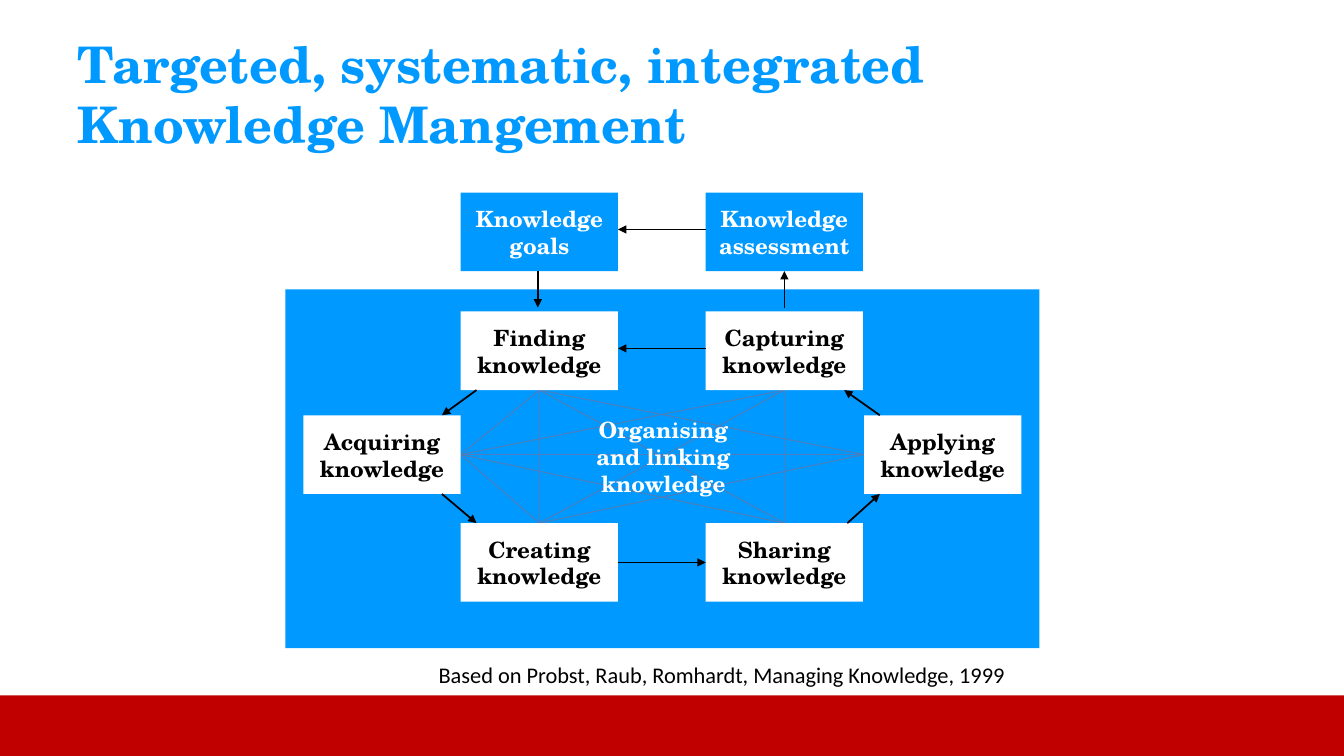
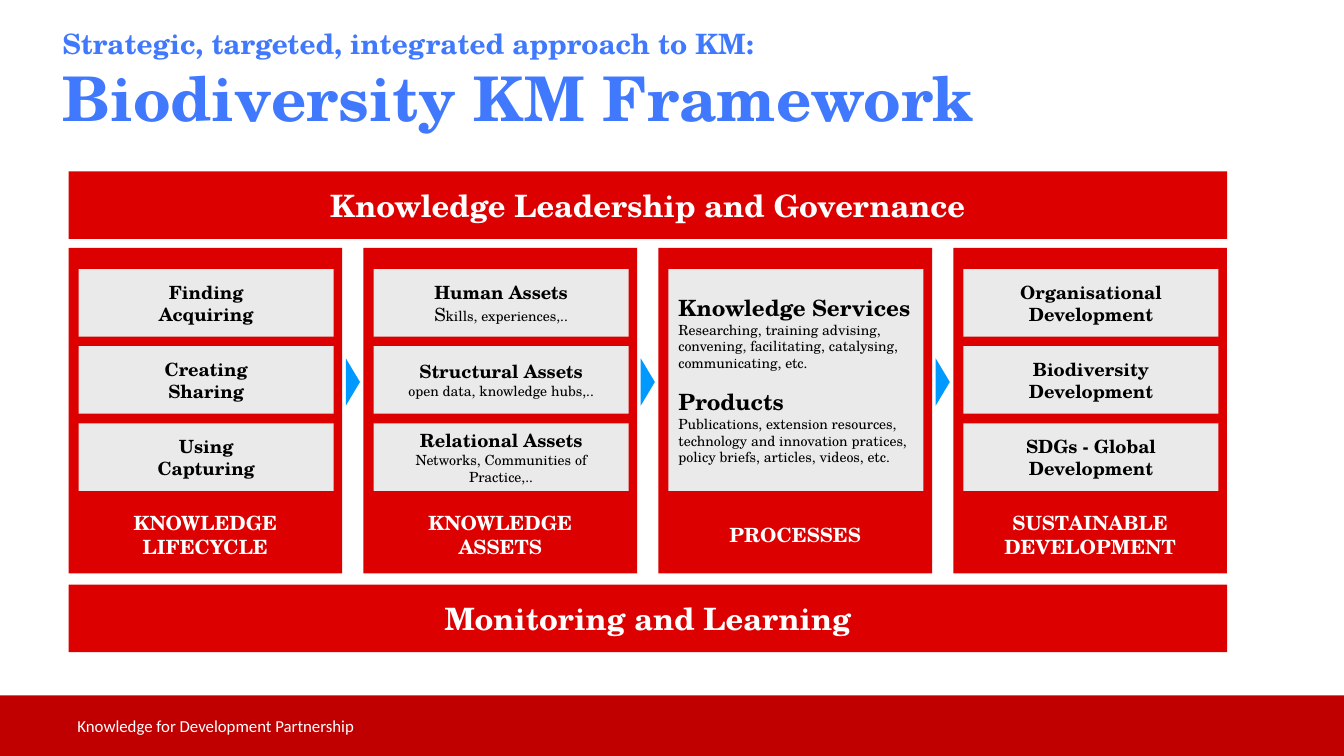
from itertools import pairwise

from lxml import etree
from pptx import Presentation
from pptx import util as u
from pptx.dml.color import RGBColor
from pptx.enum import shapes, text
from pptx.oxml import ns

THEME = {
    "serif": "TeX Gyre Schola",
    "sans": "Calibri",
    "black": "000000",
    "white": "FFFFFF",
    "azure": "0099FF",
    "title_blue": "4079FE",
    "mesh_blue": "4B7EBC",
    "band_red": "C00000",
    "panel_red": "DC0000",
    "card_grey": "EAEAEA",
}
# Style name: font, size, bold, colour, space before
STYLES = {
    "title": ("serif", 36, True, "azure", 0),
    "kicker": ("serif", 20, True, "title_blue", 0),
    "headline": ("serif", 44, True, "title_blue", 0),
    "step_light": ("serif", 16, True, "white", 0),
    "step_dark": ("serif", 16, True, "black", 0),
    "bar": ("serif", 22, True, "white", 0),
    "label": ("serif", 14, True, "white", 0),
    "card": ("serif", 13, True, "black", 0),
    "card_initial": ("serif", 13, False, "black", 0),
    "detail": ("serif", 10, False, "black", 0),
    "heading": ("serif", 16, True, "black", 0),
    "next_heading": ("serif", 16, True, "black", 12),
    "source": ("sans", 16, False, "black", 0),
    "footer": ("sans", 12, False, "white", 0),
}
SLIDE_W, SLIDE_H = 13.33, 7.5
BAND_TOP = 0.92 * SLIDE_H

# Slide 1: the knowledge cycle
STEP_COLUMNS = (3.01, 4.57, 7.0, 8.57)
STEP_ROWS = (1.91, 3.09, 4.12, 5.19)
STEP_W, STEP_H = 1.56, 0.78
STEPS = {  # name: column, row, wording
    "goals": (1, 0, "Knowledge goals"),
    "assessment": (2, 0, "Knowledge assessment"),
    "finding": (1, 1, "Finding knowledge"),
    "capturing": (2, 1, "Capturing knowledge"),
    "acquiring": (0, 2, "Acquiring knowledge"),
    "applying": (3, 2, "Applying knowledge"),
    "creating": (1, 3, "Creating knowledge"),
    "sharing": (2, 3, "Sharing knowledge"),
}
# Each end: step, then share of its width and height
FLOWS = [
    (("assessment", 0, 0.47), ("goals", 1, 0.47)),
    (("goals", 0.49, 1), ("finding", 0.49, -0.05)),
    (("capturing", 0.5, -0.05), ("assessment", 0.5, 1)),
    (("capturing", 0, 0.47), ("finding", 1, 0.47)),
    (("finding", 0.1, 1), ("acquiring", 0.88, 0)),
    (("acquiring", 0.88, 1), ("creating", 0.1, 0)),
    (("creating", 1, 0.5), ("sharing", 0, 0.5)),
    (("sharing", 0.9, 0), ("applying", 0.1, 1)),
    (("applying", 0.1, 0), ("capturing", 0.88, 1)),
]
MESH_ENDS = {
    "finding": (0.5, 1), "capturing": (0.5, 1), "acquiring": (1, 0.5),
    "applying": (0, 0.5), "creating": (0.5, 0), "sharing": (0.5, 0),
}
MESH = {
    "acquiring": ("creating", "applying", "sharing", "capturing", "finding"),
    "finding": ("creating", "applying", "sharing"),
    "capturing": ("sharing", "creating"),
    "applying": ("creating",),
}

# Slide 2: the framework; a card is a list of lines, a line a list of runs
PANEL_LEFT, PANEL_TOP, PANEL_H = 0.68, 2.46, 3.23
BAR_W, BAR_H, COLUMN_GAP = 11.49, 0.67, 0.21
CARD_TOP, CARD_W, CARD_H, CARD_PITCH = 2.67, 2.53, 0.67, 0.765
BARS = [(1.7, "Knowledge Leadership and Governance"), (5.8, "Monitoring and Learning")]


def lines(style, *wordings):
    return [[(wording, style)] for wording in wordings]


PANELS = [
    (("KNOWLEDGE", "LIFECYCLE"), [
        lines("card", "Finding", "Acquiring"),
        lines("card", "Creating", "Sharing"),
        lines("card", "Using", "Capturing"),
    ]),
    (("KNOWLEDGE", "ASSETS"), [
        lines("card", "Human Assets")
        + [[("S", "card_initial"), ("kills, experiences,..", "detail")]],
        lines("card", "Structural Assets") + lines("detail", "open data, knowledge hubs,.."),
        lines("card", "Relational Assets")
        + lines("detail", "Networks, Communities of Practice,.."),
    ]),
    (("PROCESSES",), [
        lines("heading", "Knowledge Services")
        + lines("detail", "Researching, training advising, convening, facilitating, "
                          "catalysing, communicating, etc.")
        + lines("next_heading", "Products")
        + lines("detail", "Publications, extension resources, technology and innovation "
                          "pratices, policy briefs, articles, videos, etc."),
    ]),
    (("SUSTAINABLE", "DEVELOPMENT"), [
        lines("card", "Organisational", "Development"),
        lines("card", "Biodiversity", "Development"),
        lines("card", "SDGs - Global", "Development"),
    ]),
]


def colour(name):
    return RGBColor.from_string(THEME[name])


def inches(*lengths):
    return [u.Inches(length) for length in lengths]


def write(box, content, align="CENTER", anchor="MIDDLE", inset=(0.1, 0.05, 0.1, 0.05)):
    """Fill a box with lines of (wording, style) runs; inset is left, top, right, bottom."""
    frame = box.text_frame
    left, top, right, bottom = inches(*inset)
    frame_format = {
        "word_wrap": True, "vertical_anchor": text.MSO_ANCHOR[anchor],
        "margin_left": left, "margin_top": top,
        "margin_right": right, "margin_bottom": bottom,
    }
    for key, value in frame_format.items():
        setattr(frame, key, value)
    for number, line in enumerate(content):
        para = frame.add_paragraph() if number else frame.paragraphs[0]
        para.alignment = text.PP_ALIGN[align]
        for wording, style in line:
            font, size, bold, ink, space = STYLES[style]
            if space:
                para.space_before = u.Pt(space)
            span = para.add_run()
            span.text = wording
            for key, value in {"name": THEME[font], "size": u.Pt(size), "bold": bold}.items():
                setattr(span.font, key, value)
            span.font.color.rgb = colour(ink)


def add_block(page, area, fill, content=(), preset="RECTANGLE", **layout):
    block = page.shapes.add_shape(shapes.MSO_SHAPE[preset], *inches(*area))
    block.shadow.inherit = False
    block.fill.solid()
    block.fill.fore_color.rgb = colour(fill)
    block.line.fill.background()
    if content:
        write(block, content, **layout)
    return block


def add_text(page, area, content, **layout):
    write(page.shapes.add_textbox(*inches(*area)), content, **layout)


def add_line(page, start, end, ink, width, arrow=False):
    line = page.shapes.add_connector(shapes.MSO_CONNECTOR.STRAIGHT, *inches(*start, *end))
    line.line.color.rgb = colour(ink)
    line.line.width = u.Pt(width)
    if arrow:
        etree.SubElement(line.line._get_or_add_ln(), ns.qn("a:tailEnd"), type="triangle")
    etree.SubElement(line._element.spPr, ns.qn("a:effectLst"))


def new_page(deck):
    page = deck.slides.add_slide(deck.slide_layouts[6])
    add_block(page, (0, BAND_TOP, SLIDE_W, SLIDE_H - BAND_TOP), "band_red")
    return page


def step_point(name, across=0, down=0):
    column, row, _ = STEPS[name]
    return STEP_COLUMNS[column] + across * STEP_W, STEP_ROWS[row] + down * STEP_H


def build_cycle(deck):
    page = new_page(deck)
    add_text(page, (0.67, 0.3, 10.09, 1.25),
             lines("title", "Targeted, systematic, integrated Knowledge Mangement"),
             align="LEFT")
    add_block(page, (2.83, 2.87, 7.48, 3.56), "azure")
    for start, ends in MESH.items():
        for end in ends:
            add_line(page, step_point(start, *MESH_ENDS[start]),
                     step_point(end, *MESH_ENDS[end]), "mesh_blue", 0.75)
    for name, (_, row, wording) in STEPS.items():
        fill, style = ("white", "step_dark") if row else ("azure", "step_light")
        add_block(page, (*step_point(name), STEP_W, STEP_H), fill, lines(style, wording))
    for start, end in FLOWS:
        add_line(page, step_point(*start), step_point(*end), "black", 1.25, arrow=True)
    add_text(page, (5.8, 4.14, STEP_W, STEP_H),
             lines("step_light", "Organising and linking knowledge"))
    add_text(page, (4.35, 6.56, 5.75, 0.27),
             lines("source", "Based on Probst, Raub, Romhardt, Managing Knowledge, 1999"),
             align="LEFT", anchor="TOP", inset=(0, 0, 0, 0))


def build_framework(deck):
    page = new_page(deck)
    add_text(page, (0.52, 0.21, 10.64, 1.53),
             lines("kicker", "Strategic, targeted, integrated approach to KM:")
             + lines("headline", "Biodiversity KM Framework"),
             align="LEFT", anchor="TOP")
    for top, wording in BARS:
        add_block(page, (PANEL_LEFT, top, BAR_W, BAR_H), "panel_red", lines("bar", wording))

    gaps = len(PANELS) - 1
    panel_w = (BAR_W - gaps * COLUMN_GAP) / len(PANELS)
    lefts = [PANEL_LEFT + i * (panel_w + COLUMN_GAP) for i in range(len(PANELS))]
    for left, (label, cards) in zip(lefts, PANELS):
        add_block(page, (left, PANEL_TOP, panel_w, PANEL_H), "panel_red")
        single = len(cards) == 1
        height = CARD_H + 2 * CARD_PITCH if single else CARD_H
        for row, card in enumerate(cards):
            add_block(page, (left + 0.1, CARD_TOP + row * CARD_PITCH, CARD_W, height),
                      "card_grey", card, align="LEFT" if single else "CENTER",
                      inset=(0.1, 0.04, 0.04 if single else 0.1, 0.04))
        add_text(page, (left, 5.07, panel_w, 0.47), lines("label", *label),
                 inset=(0, 0, 0, 0))

    base, height, middle = 0.47, 0.14, 3.79
    for left, following in pairwise(lefts):
        centre = (left + panel_w + following) / 2
        pointer = add_block(page, (centre - base / 2, middle - height / 2, base, height),
                            "azure", preset="ISOSCELES_TRIANGLE")
        pointer.rotation = 90
    add_text(page, (0.67, 7, 8.62, 0.4),
             lines("footer", "Knowledge for Development Partnership"), align="LEFT")


def main():
    deck = Presentation()
    deck.slide_width, deck.slide_height = inches(SLIDE_W, SLIDE_H)
    build_cycle(deck)
    build_framework(deck)
    deck.save("out.pptx")


if __name__ == "__main__":
    main()
